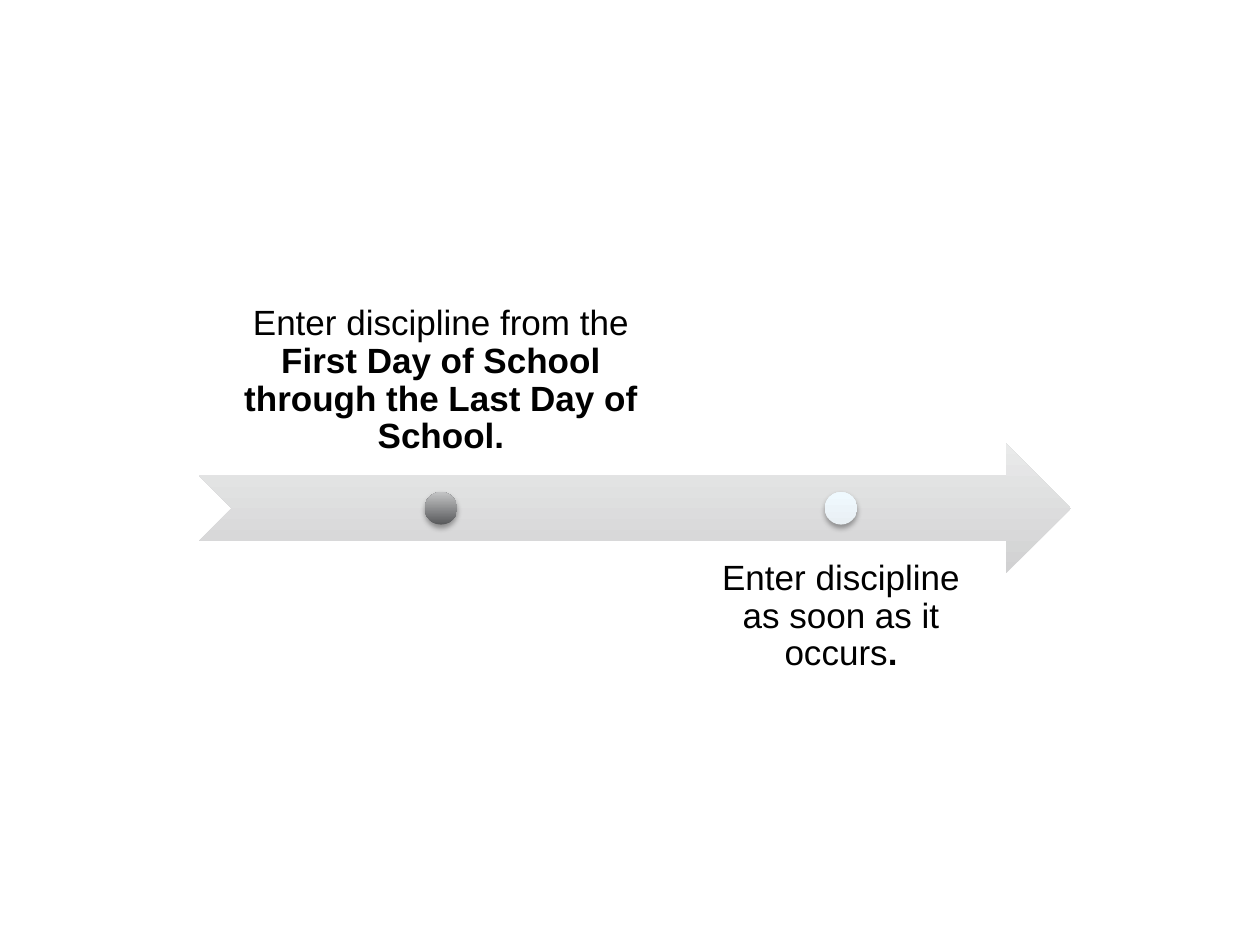
"""Build a timeline arrow slide with two discipline entry milestones."""
import pptx
import pptx.dml.color
import pptx.enum.shapes
import pptx.enum.text
import pptx.oxml
import pptx.oxml.ns
import pptx.util

Pt = pptx.util.Pt
RGB = pptx.dml.color.RGBColor
Shape = pptx.enum.shapes.MSO_SHAPE
Anchor = pptx.enum.text.MSO_ANCHOR

BLACK = RGB(0x00, 0x00, 0x00)
ARROW_COLORS = (RGB(0xD1, 0xD1, 0xD2), RGB(0xE9, 0xEA, 0xEA))
GRAY_COLORS = (RGB(0x58, 0x59, 0x5B), RGB(0xC3, 0xC4, 0xC5))
PALE_COLORS = (RGB(0xE9, 0xF0, 0xF4), RGB(0xEF, 0xF9, 0xFE))

MILESTONES = [
    {"center": 252, "width": 276.5, "above": True, "colors": GRAY_COLORS,
     "text": [("Enter discipline from the ", False),
              ("First Day of School through the Last Day of School.", True)]},
    {"center": 480.6, "width": 163.5, "above": False, "colors": PALE_COLORS,
     "text": [("Enter discipline as soon as it occurs", False), (".", True)]},
]
ARROW_LEFT, ARROW_WIDTH = 113.75, 498.25
AXIS_Y = 290.5
BAND_HEIGHT = 74.2
LABEL_GAP = 18.4
DOT_SIZE = 18.6
INSET = 11.2
SHADOW = (
    f'<a:outerShdw {pptx.oxml.ns.nsdecls("a")} blurRad="{Pt(3.1)}" dist="{Pt(1.8)}"'
    ' dir="5400000" rotWithShape="0"><a:srgbClr val="000000">'
    '<a:alpha val="35000"/></a:srgbClr></a:outerShdw>'
)


def add_gradient_shape(page, kind, left, width, height, colors):
    top = AXIS_Y - height / 2
    shape = page.shapes.add_shape(kind, Pt(left), Pt(top), Pt(width), Pt(height))
    shape.shadow.inherit = False
    shape.line.fill.background()
    shape.fill.gradient()
    shape.fill.gradient_angle = 90
    for stop, color, position in zip(shape.fill.gradient_stops, colors, (0, 1)):
        stop.color.rgb = color
        stop.position = position
    return shape


def add_label(page, milestone):
    above, width = milestone["above"], milestone["width"]
    top = AXIS_Y - LABEL_GAP - BAND_HEIGHT if above else AXIS_Y + LABEL_GAP
    box = page.shapes.add_textbox(
        Pt(milestone["center"] - width / 2), Pt(top), Pt(width), Pt(BAND_HEIGHT))
    frame = box.text_frame
    frame.word_wrap = True
    frame.vertical_anchor = Anchor.BOTTOM if above else Anchor.TOP
    frame.margin_left = frame.margin_right = Pt(INSET)
    frame.margin_top = frame.margin_bottom = Pt(INSET)
    para = frame.paragraphs[0]
    para.alignment = pptx.enum.text.PP_ALIGN.CENTER
    para.line_spacing = 0.9
    para.space_after = Pt(7)
    para.font.name = "Arial"
    para.font.size = Pt(20)
    para.font.color.rgb = BLACK
    for text, bold in milestone["text"]:
        span = para.add_run()
        span.text = text
        span.font.bold = bold


def add_dot(page, milestone):
    dot = add_gradient_shape(page, Shape.OVAL, milestone["center"] - DOT_SIZE / 2,
                             DOT_SIZE, DOT_SIZE, milestone["colors"])
    effects = dot.element.spPr.find(pptx.oxml.ns.qn("a:effectLst"))
    effects.append(pptx.oxml.parse_xml(SHADOW))


def main():
    deck = pptx.Presentation()
    deck.slide_width, deck.slide_height = Pt(720), Pt(540)
    page = deck.slides.add_slide(deck.slide_layouts[6])
    add_gradient_shape(page, Shape.NOTCHED_RIGHT_ARROW, ARROW_LEFT,
                       ARROW_WIDTH, BAND_HEIGHT, ARROW_COLORS)
    for milestone in MILESTONES:
        add_label(page, milestone)
        add_dot(page, milestone)
    deck.save("out.pptx")


if __name__ == "__main__":
    main()
